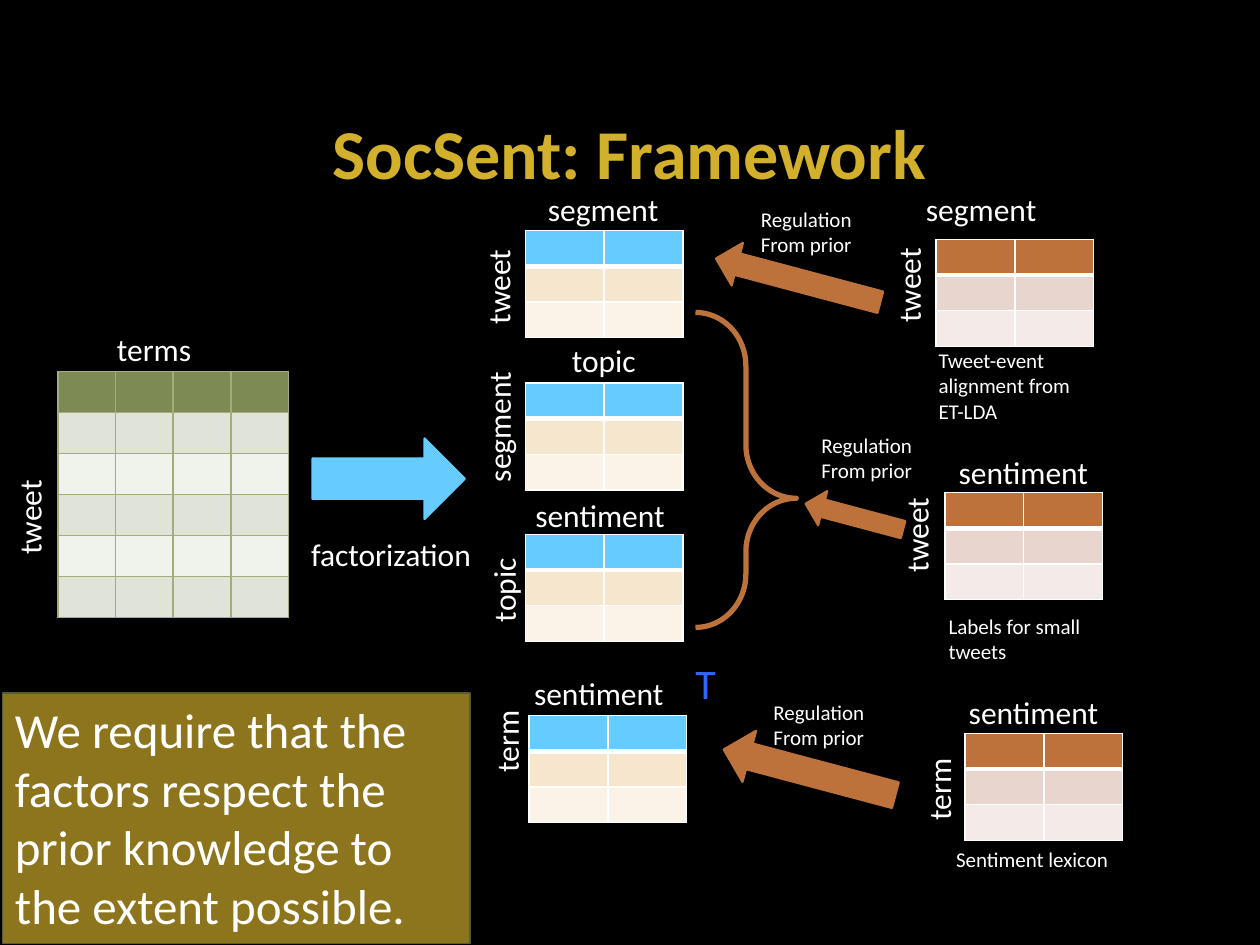
import pptx
import pptx.util
from lxml import etree
from pptx.dml.color import RGBColor
from pptx.enum.shapes import MSO_SHAPE
from pptx.enum.text import MSO_ANCHOR, MSO_AUTO_SIZE, PP_ALIGN
from pptx.oxml.ns import qn

BLACK = RGBColor(0x00, 0x00, 0x00)
WHITE = RGBColor(0xFF, 0xFF, 0xFF)
GOLD = RGBColor(0xD3, 0xB0, 0x2C)
BLUE = RGBColor(0x66, 0xCC, 0xFF)
ROYAL = RGBColor(0x33, 0x66, 0xFF)
BROWN = RGBColor(0xBD, 0x72, 0x3B)
OLIVE = RGBColor(0x8D, 0x75, 0x1D)
OLIVE_LINE = RGBColor(0x53, 0x5C, 0x38)
GREEN_LINE = RGBColor(0xA1, 0xAE, 0x79)

# Fill of each table row, from the header down
FACTOR_FILLS = [BLUE, RGBColor(0xF6, 0xE6, 0xCD), RGBColor(0xFB, 0xF3, 0xE8)]
PRIOR_FILLS = [BROWN, RGBColor(0xE8, 0xD5, 0xCE), RGBColor(0xF4, 0xEB, 0xE8)]
GREEN_BANDS = [RGBColor(0xE0, 0xE3, 0xD7), RGBColor(0xF0, 0xF2, 0xEC)]
SOURCE_FILLS = [RGBColor(0x7D, 0x8A, 0x53)] + GREEN_BANDS * 2 + GREEN_BANDS[:1]

# The slide is a grid of 100 columns by 75 rows
SLIDE_WIDTH, SLIDE_HEIGHT = pptx.util.Inches(10), pptx.util.Inches(7.5)
UNIT = SLIDE_WIDTH // 100
FONT = "Calibri"
LABEL_WIDTHS = {"terms": 8, "tweet": 7, "segment": 10.9, "topic": 7.1,
                "sentiment": 12.4, "term": 7, "factorization": 14.9}
MATRIX_SIZE = (12.5, 8.5)
ARROW_TILT = 194.9


def grid(box):
    return [round(length * UNIT) for length in box]


def write(shape, text, size, color=WHITE, wrap=False, bold=False,
          alignment=PP_ALIGN.LEFT, anchor=MSO_ANCHOR.TOP,
          fit=MSO_AUTO_SIZE.SHAPE_TO_FIT_TEXT):
    frame = shape.text_frame
    frame.text = text
    frame.word_wrap = wrap
    frame.auto_size = fit
    frame.vertical_anchor = anchor
    for paragraph in frame.paragraphs:
        paragraph.alignment = alignment
        paragraph.font.name = FONT
        paragraph.font.size = pptx.util.Pt(size)
        paragraph.font.bold = bold
        paragraph.font.color.rgb = color


def add_text(slide, box, text, size, **options):
    shape = slide.shapes.add_textbox(*grid(box))
    write(shape, text, size, **options)
    return shape


def add_label(slide, left, top, text):
    return add_text(slide, (left, top, LABEL_WIDTHS[text], 4), text, 18)


def add_side_label(slide, left, top, text):
    """Label that reads upwards."""
    if text == "tweet":
        shape = add_text(slide, (left, top, 5, 7), text, 18)
        shape.text_frame._txBody.bodyPr.set("vert", "eaVert")
        shape.rotation = 180
    else:
        add_label(slide, left, top, text).rotation = 270


def add_shape(slide, kind, box, fill, line, line_width):
    shape = slide.shapes.add_shape(kind, *grid(box))
    shape.shadow.inherit = False
    if fill is None:
        shape.fill.background()
    else:
        shape.fill.solid()
        shape.fill.fore_color.rgb = fill
    shape.line.color.rgb = line
    shape.line.width = pptx.util.Pt(line_width)
    return shape


def style_cell(cell, fill, line, widths):
    cell.margin_top = cell.margin_bottom = 0
    etree.SubElement(cell.text_frame.paragraphs[0]._p, qn("a:endParaRPr"), sz="800")
    properties = cell._tc.get_or_add_tcPr()
    for side in "LRTB":
        width = pptx.util.Pt(widths.get(side, 1))
        border = etree.SubElement(properties, qn("a:ln" + side), w=str(width))
        solid = etree.SubElement(border, qn("a:solidFill"))
        etree.SubElement(solid, qn("a:srgbClr"), val=str(line))
    cell.fill.solid()
    cell.fill.fore_color.rgb = fill


def add_matrix(slide, box, columns, fills, line, top, side, heavy=True):
    """Table with a label above and one at its left, each (text, right, down)."""
    left, upper, width, height = box
    frame = slide.shapes.add_table(len(fills), columns, *grid(box))
    table = frame.table
    table.horz_banding = False
    for column in table.columns:
        column.width = round(width * UNIT / columns)
    for number, (row, fill) in enumerate(zip(table.rows, fills)):
        row.height = round(height * UNIT / len(fills))
        widths = {0: {"B": 3}, 1: {"T": 3}}.get(number, {}) if heavy else {}
        for cell in row.cells:
            style_cell(cell, fill, line, widths)
    for place, (text, right, down) in ((add_label, top), (add_side_label, side)):
        place(slide, left + right, upper + down, text)


def add_prior(slide, corner, top, side, caption, caption_box):
    """Prior knowledge matrix with a caption below."""
    left, upper = corner
    add_matrix(slide, corner + MATRIX_SIZE, 2, PRIOR_FILLS, WHITE, top, side)
    right, down, width, height = caption_box
    add_text(slide, (left + right, upper + down, width, height), caption, 12, wrap=True)


def add_regulation(slide, box, right, down):
    """Tilted arrow with its note above."""
    arrow = add_shape(slide, MSO_SHAPE.RIGHT_ARROW, box, BROWN, BROWN, 1.25)
    arrow.rotation = ARROW_TILT
    add_text(slide, (box[0] + right, box[1] + down, 9.3, 5), "Regulation\nFrom prior", 12)


def add_factorization(slide, box):
    """Big arrow with its label below."""
    left, top, _, height = box
    add_shape(slide, MSO_SHAPE.RIGHT_ARROW, box, BLUE, BLUE, 1.25)
    add_label(slide, left - 1.1, top + height + 0.8, "factorization")


def add_message(slide, box):
    shape = add_shape(slide, MSO_SHAPE.RECTANGLE, box, OLIVE, OLIVE_LINE, 0.75)
    write(shape, "We require that the factors respect the prior knowledge "
          "to the extent possible.", 28, wrap=True)


def main():
    presentation = pptx.Presentation()
    presentation.slide_width, presentation.slide_height = SLIDE_WIDTH, SLIDE_HEIGHT
    slide = presentation.slides.add_slide(presentation.slide_layouts[6])
    slide.background.fill.solid()
    slide.background.fill.fore_color.rgb = BLACK

    # Title
    add_text(slide, (7.5, 6.7, 84.9, 10.6), "SocSent: Framework", 40, color=GOLD,
             wrap=True, bold=True, alignment=PP_ALIGN.CENTER,
             anchor=MSO_ANCHOR.MIDDLE, fit=MSO_AUTO_SIZE.NONE)

    # Source matrix and its factorization
    add_matrix(slide, (4.6, 29.5, 18.3, 19.5), 4, SOURCE_FILLS, GREEN_LINE,
               ("terms", 3.7, -3.8), ("tweet", -4.3, 8.5), heavy=False)
    add_factorization(slide, (24.8, 34.8, 12.1, 6.4))

    # Factor matrices
    for corner, top, side in (
        ((41.7, 18.3), ("segment", 0.8, -3.7), ("tweet", -4.2, 1.4)),
        ((41.7, 30.4), ("topic", 2.7, -3.8), ("segment", -7.6, 1.4)),
        ((41.7, 42.4), ("sentiment", -0.2, -3.5), ("topic", -5.3, 2.4)),
        ((42, 56.8), ("sentiment", -0.6, -3.8), ("term", -5.3, 0)),
    ):
        add_matrix(slide, corner + MATRIX_SIZE, 2, FACTOR_FILLS, WHITE, top, side)
    add_text(slide, (54.2, 51.7, 3.7, 5), "T", 24, color=ROYAL)

    # Brace over the first three factors
    brace = add_shape(slide, MSO_SHAPE.RIGHT_BRACE, (55.2, 24.8, 8, 25), None, BROWN, 3)
    brace.adjustments[0], brace.adjustments[1] = 0.53, 0.59

    # Prior knowledge
    add_prior(slide, (74.3, 19), ("segment", -1.8, -4.4), ("tweet", -4.2, 0.6),
              "Tweet-event alignment from ET-LDA", (-0.8, 8.1, 12.8, 7.1))
    add_prior(slide, (75, 39.1), ("sentiment", 0.1, -3.6), ("tweet", -4.3, 0.3),
              "Labels for small tweets", (-0.7, 9.1, 14.2, 5))
    add_prior(slide, (76.6, 58.2), ("sentiment", -0.7, -3.7), ("term", -5.6, 2.4),
              "Sentiment lexicon", (-1.7, 8.5, 15.6, 3))

    # Regulation from priors to factors
    add_regulation(slide, (56.6, 20.5, 13.5, 3.5), 2.8, -4.6)
    add_regulation(slide, (63.8, 39.6, 8, 2.8), 0.4, -5.8)
    add_regulation(slide, (57.2, 59.2, 14.1, 4.2), 3.2, -4.2)

    # Message
    add_message(slide, (0.2, 55, 37.1, 19.9))
    presentation.save("out.pptx")


if __name__ == "__main__":
    main()
